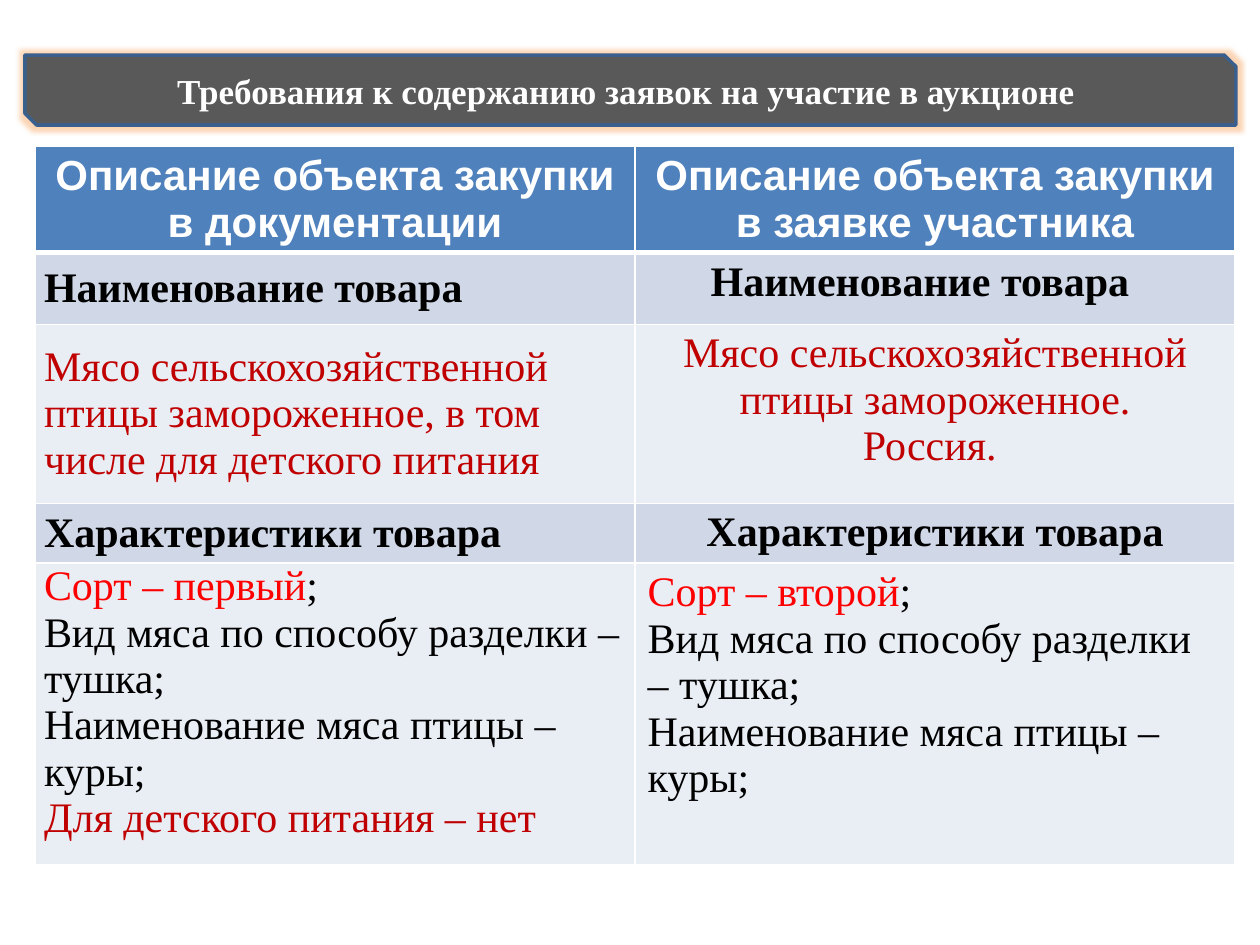
from dataclasses import dataclass
from lxml.etree import SubElement
from pptx import Presentation
from pptx.dml.color import RGBColor as RGB
from pptx.enum.shapes import MSO_SHAPE as Shape
from pptx.enum.text import MSO_ANCHOR as Anchor, PP_ALIGN as Align
from pptx.oxml import parse_xml
from pptx.oxml.ns import nsdecls, qn
from pptx.util import Emu, Pt


@dataclass(frozen=True)
class Theme:
    white: str = "FFFFFF"
    black: str = "000000"
    wine: str = "C00000"
    red: str = "FF0000"
    bar: str = "595959"
    edge: str = "3A5F8C"
    glow: str = "F79646"
    head: str = "4F81BD"
    band: str = "D0D8E8"
    pale: str = "E9EDF4"
    sans: str = "Arial"
    serif: str = "Times New Roman"
    title: int = 20
    body: int = 24


T = Theme()
NAME = "Наименование товара"
TRAITS = "Характеристики товара"
CUT = "Вид мяса по способу разделки – тушка;"
KIND = "Наименование мяса птицы – куры;"
ROWS = [105, 72, 179, 60, 302]
FILLS = [T.head, T.band, T.pale, T.band, T.pale]
BOLD = [True, True, False, True, False]
INKS = [T.white, T.black, T.wine, T.black, T.black]
LEFT = [
    ["Описание объекта закупки", "в документации"],
    [NAME],
    ["Мясо сельскохозяйственной птицы замороженное, в том числе для детского питания"],
    [TRAITS],
    ["Сорт – первый", CUT, KIND, "Для детского питания – нет"],
]
RIGHT = [
    ["Описание объекта закупки", "в заявке участника"],
    [NAME],
    ["Мясо сельскохозяйственной птицы замороженное.", "Россия. "],
    [TRAITS],
    ["Сорт – второй", CUT, KIND],
]
ALIGN = [Align.CENTER, Align.JUSTIFY, Align.CENTER, Align.CENTER, Align.LEFT]


def px(n):
    return Emu(round(n * 914400 / 126))


def style(run, size, face, ink, bold):
    font = run.font
    font.size, font.name, font.bold = Pt(size), face, bold
    font.color.rgb = RGB.from_string(ink)


def paint(fill, color):
    fill.solid()
    fill.fore_color.rgb = RGB.from_string(color)


def write(frame, lines, align, size, face, ink, bold):
    frame.text = "\n".join(lines)
    for par in frame.paragraphs:
        par.alignment = align
        for run in par.runs:
            style(run, size, face, ink, bold)


def add_glow(shape):
    shape.shadow.inherit = False
    fx = shape._element.spPr.find(qn("a:effectLst"))
    glow = SubElement(fx, qn("a:glow"), rad="63500")
    color = SubElement(glow, qn("a:srgbClr"), val=T.glow)
    SubElement(color, qn("a:alpha"), val="40000")


def add_title(slide):
    bar = slide.shapes.add_shape(Shape.SNIP_2_DIAG_RECTANGLE,
                                 px(25), px(55), px(1211), px(70))
    paint(bar.fill, T.bar)
    bar.line.color.rgb = RGB.from_string(T.edge)
    bar.line.width = Pt(2)
    add_glow(bar)
    frame = bar.text_frame
    frame.word_wrap = True
    frame.vertical_anchor = Anchor.MIDDLE
    write(frame, ["Требования к содержанию заявок на участие в аукционе "],
          Align.CENTER, T.title, T.serif, T.white, True)


def add_edges(cell, base):
    """Draw white cell borders, with the bottom one base points wide."""
    props = cell._tc.get_or_add_tcPr()
    for i, (side, wide) in enumerate(zip("LRTB", (1, 1, 1, base))):
        props.insert(i, parse_xml(
            f'<a:ln{side} {nsdecls("a")} w="{Pt(wide)}"><a:solidFill>'
            f'<a:srgbClr val="{T.white}"/></a:solidFill></a:ln{side}>'))


def add_grade(par):
    """Make the grade red and end it with a black semicolon."""
    par.runs[0].font.color.rgb = RGB.from_string(T.red)
    tail = par.add_run()
    tail.text = ";"
    style(tail, T.body, T.serif, T.black, False)


def fill_cell(cell, row, lines, align):
    paint(cell.fill, FILLS[row])
    add_edges(cell, 1 if row else 3)
    face = T.serif if row else T.sans
    write(cell.text_frame, lines, align, T.body, face, INKS[row], BOLD[row])


def add_grid(slide):
    grid = slide.shapes.add_table(len(ROWS), 2, px(35), px(146),
                                  px(1200), px(sum(ROWS))).table
    grid.horz_banding = False
    for col in grid.columns:
        col.width = px(600)
    for i, high in enumerate(ROWS):
        grid.rows[i].height = px(high)
        left, right = grid.cell(i, 0), grid.cell(i, 1)
        fill_cell(left, i, LEFT[i], Align.LEFT if i else Align.CENTER)
        fill_cell(right, i, RIGHT[i], ALIGN[i])
        if i:
            left.margin_left = left.margin_right = px(9)
            left.margin_top = left.margin_bottom = 0
        if 0 < i < 4:
            left.vertical_anchor = Anchor.MIDDLE
    name = grid.cell(1, 1).text_frame.paragraphs[0]
    name._p.get_or_add_pPr().set("indent", str(px(63)))
    for col in range(2):
        add_grade(grid.cell(4, col).text_frame.paragraphs[0])
    last = grid.cell(4, 0).text_frame.paragraphs[-1].runs[0]
    last.font.color.rgb = RGB.from_string(T.wine)


def main():
    deck = Presentation()
    deck.slide_width, deck.slide_height = px(1260), px(945)
    slide = deck.slides.add_slide(deck.slide_layouts[6])
    add_title(slide)
    add_grid(slide)
    deck.save("out.pptx")


if __name__ == "__main__":
    main()
